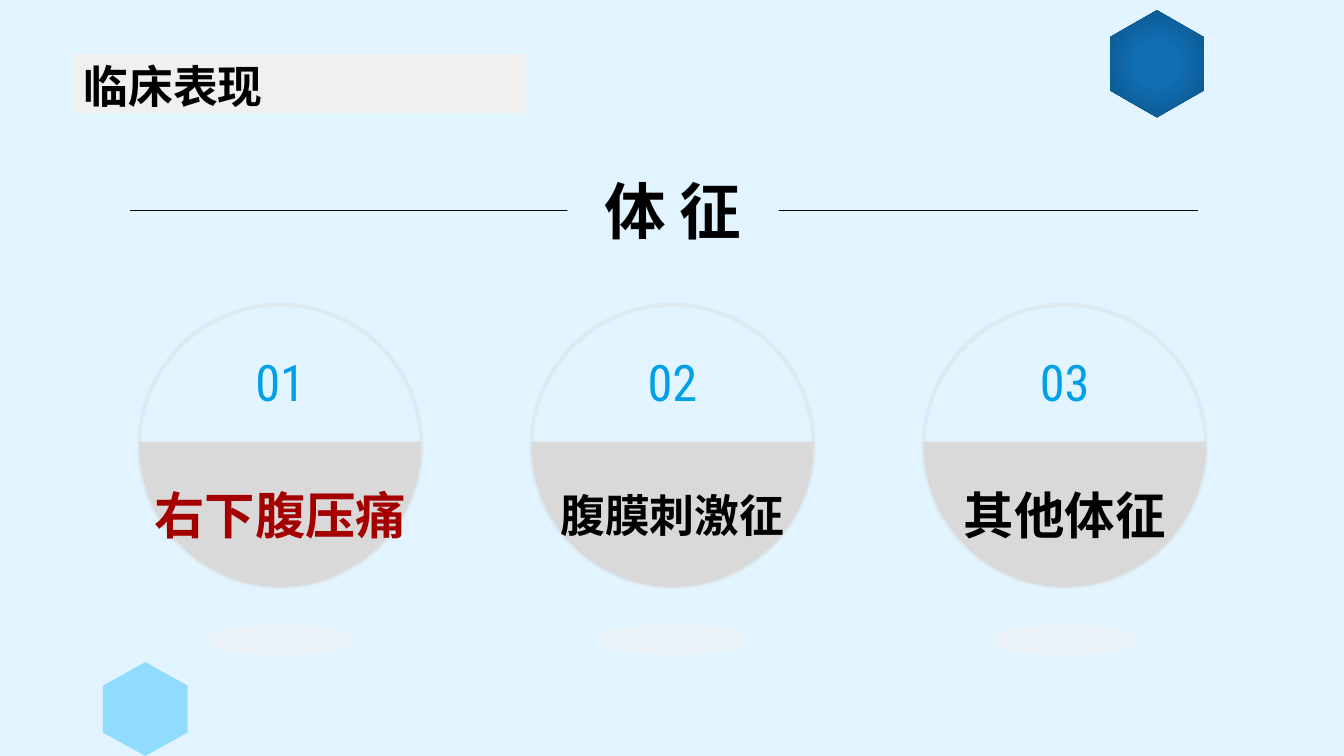
from lxml import etree
from pptx import Presentation
from pptx.dml.color import RGBColor
from pptx.enum import shapes, text
from pptx.oxml import parse_xml
from pptx.oxml.ns import nsdecls, qn
from pptx.util import Pt

COLORS = {
    "sky": "E2F4FF", "pale_blue": "90DCFF", "blue": "106EB3", "navy": "0C5386",
    "label": "F0F0F0", "gray": "D9D9D9", "shadow": "F2F2F2",
    "black": "000000", "number": "00A0E9", "red": "A40000",
}
OVAL = shapes.MSO_SHAPE.OVAL
RECT = shapes.MSO_SHAPE.RECTANGLE
TOP, MIDDLE = text.MSO_ANCHOR.TOP, text.MSO_ANCHOR.MIDDLE
CENTER = text.PP_ALIGN.CENTER


def rgb(name):
    return RGBColor.from_string(COLORS[name])


def set_alpha(color_fill, percent):
    color = color_fill._xPr.find(qn("a:solidFill"))[0]
    etree.SubElement(color, qn("a:alpha"), val=str(percent * 1000))


def paint(sp, fill=None):
    sp.shadow.inherit = False
    sp.line.fill.background()
    if fill:
        sp.fill.solid()
        sp.fill.fore_color.rgb = rgb(fill)
    else:
        sp.fill.background()
    return sp


def add_shape(s, kind, box, fill=None):
    return paint(s.shapes.add_shape(kind, *map(Pt, box)), fill)


def add_outline(s, points, fill):
    points = [(Pt(x), Pt(y)) for x, y in points]
    builder = s.shapes.build_freeform(*points[0], scale=1.0)
    builder.add_line_segments(points[1:], close=True)
    return paint(builder.convert_to_shape(), fill)


def bend(sp, first):
    """Turn each three line ends, from index first on, into one Bezier curve."""
    lines = list(sp._element.spPr.iter(qn("a:lnTo")))[first:]
    for i in range(0, len(lines) - 2, 3):
        curve = etree.Element(qn("a:cubicBezTo"))
        lines[i].addprevious(curve)
        for line in lines[i:i + 3]:
            curve.append(line[0])
            line.getparent().remove(line)


def write(sp, words, size, color="black", anchor=MIDDLE, align=CENTER,
          name="Arial", bold=True):
    tf = sp.text_frame
    tf.word_wrap = True
    tf.vertical_anchor = anchor
    p = tf.paragraphs[0]
    p.alignment = align
    r = p.add_run()
    r.text = words
    for key, value in {"size": Pt(size), "name": name, "bold": bold}.items():
        setattr(r.font, key, value)
    r.font.color.rgb = rgb(color)
    return p


def hexagon(s, left, top, width, height, fill):
    right, bottom, mid = left + width, top + height, left + width / 2
    upper, lower = top + height / 4, bottom - height / 4
    return add_outline(s, [(right, lower), (right, upper), (mid, top),
                           (left, upper), (left, lower), (mid, bottom)], fill)


def decorations(s):
    hexagon(s, 73.6, 473, 60.5, 67, "pale_blue")
    sp = hexagon(s, 793.1, 7.3, 66.6, 76.5, "blue")
    solid = sp._element.spPr.find(qn("a:solidFill"))
    solid.getparent().replace(solid, parse_xml(
        f'<a:gradFill {nsdecls("a")} rotWithShape="1"><a:gsLst>'
        f'<a:gs pos="29000"><a:srgbClr val="{COLORS["blue"]}"/></a:gs>'
        f'<a:gs pos="100000"><a:srgbClr val="{COLORS["navy"]}"/></a:gs>'
        '</a:gsLst><a:path path="circle">'
        '<a:fillToRect l="50000" t="50000" r="50000" b="50000"/>'
        '</a:path></a:gradFill>'))


def page_label(s, box, words):
    sp = add_shape(s, RECT, box, "label")
    p = write(sp, words, 32, align=text.PP_ALIGN.LEFT)
    p.line_spacing = 1.1


def heading(s, left, top, width, height, words):
    # Rule across the slide, interrupted by the heading's box
    y = top + height / 2
    rule = s.shapes.add_connector(shapes.MSO_CONNECTOR.STRAIGHT,
                                  Pt(left), Pt(y), Pt(left + width), Pt(y))
    rule.line.color.rgb = rgb("black")
    rule.line.width = Pt(0.5)
    etree.SubElement(rule._element.spPr, qn("a:effectLst"))
    sp = add_shape(s, RECT, (left + 312.3, top, 151, height), "sky")
    write(sp, words, 44, anchor=TOP)
    sp.text_frame.auto_size = text.MSO_AUTO_SIZE.SHAPE_TO_FIT_TEXT


def sign(s, left, top, size, number, words, text_size, color):
    radius = size / 2
    # Ring with the number
    ring = add_shape(s, OVAL, (left, top, size, size))
    ring.line.color.rgb = rgb("gray")
    ring.line.width = Pt(3)
    set_alpha(ring.line.fill, 35)
    write(ring, number, 36, "number", TOP, name="Roboto Condensed", bold=False)

    # Filled lower half with the sign's name
    cx, cy = left + radius, top + radius
    right, bottom, rim = left + size, top + size, cy - 3
    pull = radius * 0.55
    half = add_outline(s, [
        (left, rim), (right, rim), (right, cy),
        (right, cy + pull), (cx + pull, bottom), (cx, bottom),
        (cx - pull, bottom), (left, cy + pull), (left, cy)], "gray")
    bend(half, 2)
    write(half, words, text_size, color)

    # Shadow on the ground
    shadow = add_shape(s, OVAL, (cx - 52.2, top + 228, 104.4, 22.4), "shadow")
    set_alpha(shadow.fill, 50)


def main():
    prs = Presentation()
    prs.slide_width, prs.slide_height = Pt(960), Pt(540)
    s = prs.slides.add_slide(prs.slide_layouts[6])
    s.background.fill.solid()
    s.background.fill.fore_color.rgb = rgb("sky")

    decorations(s)
    page_label(s, (52.6, 38.3, 323.3, 42.5), "临床表现")
    heading(s, 92.9, 119.9, 762.5, 60.5, "体 征")
    signs = [("右下腹压痛", 36, "red"), ("腹膜刺激征", 32, "black"),
             ("其他体征", 36, "black")]
    for i, item in enumerate(signs):
        sign(s, 99.4 + i * 280.2, 217.7, 201.6, f"{i + 1:02}", *item)
    prs.save("out.pptx")


if __name__ == "__main__":
    main()
